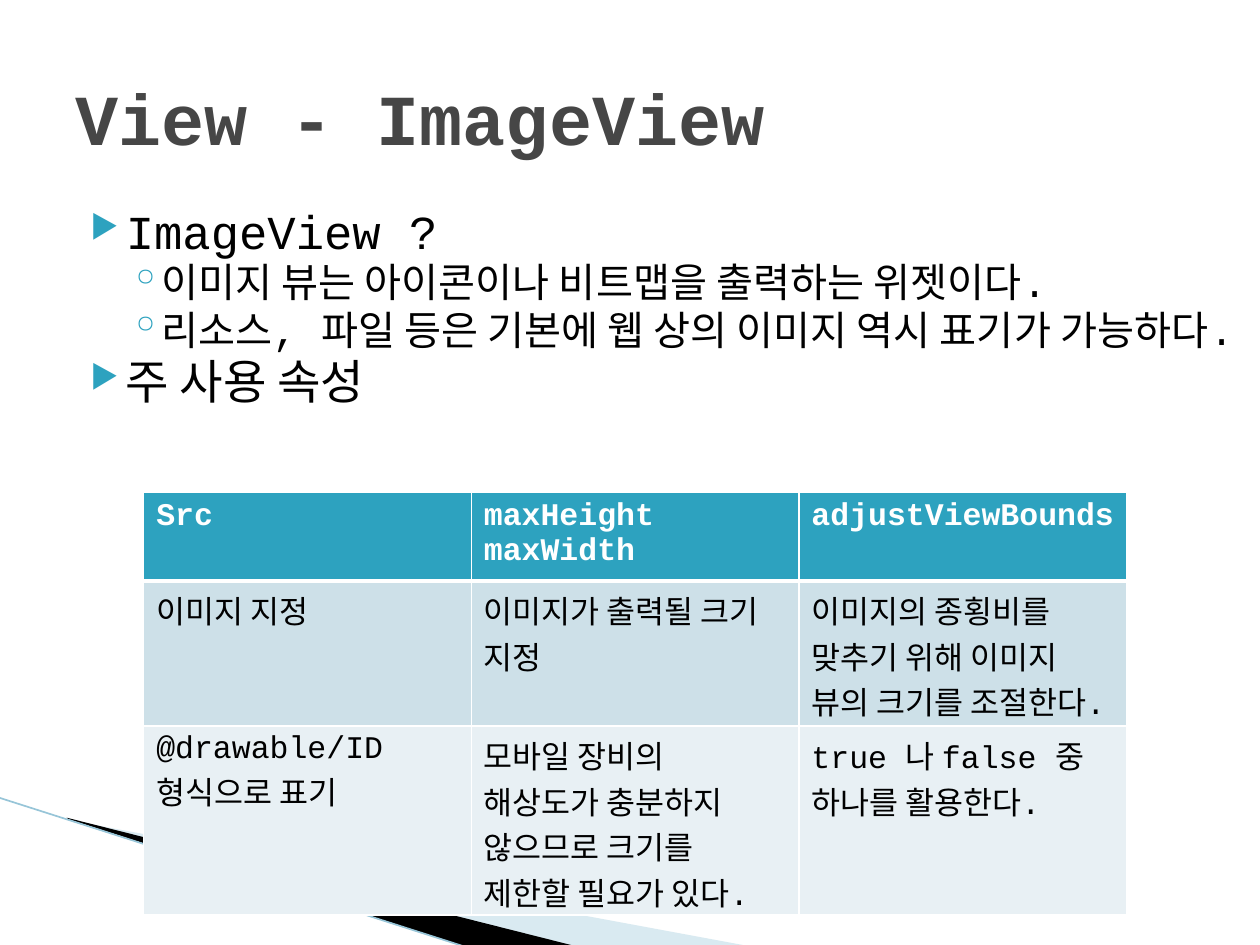
from lxml import etree
from pptx import Presentation
from pptx.dml.color import RGBColor
from pptx.enum.shapes import MSO_CONNECTOR
from pptx.enum.text import MSO_ANCHOR, PP_ALIGN
from pptx.oxml.ns import qn
from pptx.util import Inches, Pt

STRAIGHT = MSO_CONNECTOR.STRAIGHT
MIDDLE, TOP = MSO_ANCHOR.MIDDLE, MSO_ANCHOR.TOP
LEFT = PP_ALIGN.LEFT

FONT = "Courier New"
TEAL, BLACK, WHITE, GREY = "2DA2BF", "000000", "FFFFFF", "464646"
PALE_BLUE, EDGE_BLUE = "A0CBDC", "97C5D8"

TITLE = "View - ImageView"
BULLETS = [
    (0, "ImageView ?"),
    (1, "이미지 뷰는 아이콘이나 비트맵을 출력하는 위젯이다."),
    (1, "리소스, 파일 등은 기본에 웹 상의 이미지 역시 표기가 가능하다."),
    (0, "주 사용 속성"),
]
# One entry per level: indents in inches, sizes and space in points
LEVELS = [
    {"left": 0.4, "hang": 0.28, "size": 27, "before": 4, "char": "▶", "percent": 68},
    {"left": 0.68, "hang": 0.25, "size": 23, "before": 3.2, "char": "◦", "percent": 100},
]
ATTRIBUTES = [
    ["Src", "maxHeight\nmaxWidth", "adjustViewBounds"],
    ["이미지 지정", "이미지가 출력될 크기 지정",
     "이미지의 종횡비를 맞추기 위해 이미지 뷰의 크기를 조절한다."],
    ["@drawable/ID 형식으로 표기",
     "모바일 장비의 해상도가 충분하지 않으므로 크기를 제한할 필요가 있다.",
     "true 나 false 중 하나를 활용한다."],
]
ROW_FILLS = [TEAL, "CDE0E8", "E8F0F4"]
ROW_HEIGHTS = [0.65, 1.15, 1.5]
COLUMN_WIDTH = 2.6

PALE_WEDGE = [(0.55, 6.51), (5.95, 7.51), (4.56, 7.51), (0.55, 6.5)]
BLACK_WEDGE = [(0.53, 6.49), (4.57, 7.51), (3.72, 7.52), (0.54, 6.5)]


def rgb(value):
    return RGBColor.from_string(value)


def add_child(parent, tag, **attributes):
    return etree.SubElement(parent, qn(tag), attributes)


def add_span(para, text, size, color, bold=False):
    span = para.add_run()
    span.text = text
    span.font.name = FONT
    span.font.size = Pt(size)
    span.font.bold = bold
    span.font.color.rgb = rgb(color)


def add_wedge(page, points, color, opacity=100):
    points = [(Inches(x), Inches(y)) for x, y in points]
    builder = page.shapes.build_freeform(*points[0])
    builder.add_line_segments(points[1:], close=True)
    wedge = builder.convert_to_shape()
    wedge.shadow.inherit = False
    wedge.line.fill.background()
    wedge.fill.solid()
    wedge.fill.fore_color.rgb = rgb(color)
    if opacity < 100:
        paint = wedge.fill._xPr.find(qn("a:solidFill"))[0]
        add_child(paint, "a:alpha", val=str(opacity * 1000))


def add_edge(page, start, end):
    edge = page.shapes.add_connector(STRAIGHT, *map(Inches, start + end))
    edge.line.color.rgb = rgb(EDGE_BLUE)
    edge.line.width = Pt(0.95)
    add_child(edge._element.spPr, "a:effectLst")


def format_bullet(para, level):
    style = LEVELS[level]
    para.level = level
    properties = para._p.get_or_add_pPr()
    properties.set("marL", str(Inches(style["left"])))
    properties.set("indent", str(-Inches(style["hang"])))
    add_child(add_child(properties, "a:buClr"), "a:srgbClr", val=TEAL)
    add_child(properties, "a:buSzPct", val=str(style["percent"] * 1000))
    add_child(properties, "a:buChar", char=style["char"])
    para.line_spacing = 0.86


def add_bullets(page):
    box = page.shapes.add_textbox(Inches(0.5), Inches(1.62), Inches(9.3), Inches(4.95))
    frame = box.text_frame
    frame.word_wrap = True
    for index, (level, text) in enumerate(BULLETS):
        para = frame.add_paragraph() if index else frame.paragraphs[0]
        format_bullet(para, level)
        if index:
            para.space_before = Pt(LEVELS[level]["before"])
        add_span(para, text, LEVELS[level]["size"], BLACK)


def set_borders(cell, bottom_width):
    """Draw white cell borders; they must come before the fill."""
    properties = cell._tc.get_or_add_tcPr()
    for side, width in (("L", 1), ("R", 1), ("T", 1), ("B", bottom_width)):
        border = add_child(properties, f"a:ln{side}", w=str(Pt(width)))
        add_child(add_child(border, "a:solidFill"), "a:srgbClr", val=WHITE)


def add_attribute_table(page):
    columns = len(ATTRIBUTES[0])
    table = page.shapes.add_table(
        len(ATTRIBUTES), columns, Inches(1.14), Inches(3.91),
        Inches(COLUMN_WIDTH * columns), Inches(sum(ROW_HEIGHTS))).table
    for column in table.columns:
        column.width = Inches(COLUMN_WIDTH)
    for row_index, texts in enumerate(ATTRIBUTES):
        header = row_index == 0
        table.rows[row_index].height = Inches(ROW_HEIGHTS[row_index])
        for column_index, text in enumerate(texts):
            cell = table.cell(row_index, column_index)
            set_borders(cell, 3 if header else 1)
            cell.fill.solid()
            cell.fill.fore_color.rgb = rgb(ROW_FILLS[row_index])
            frame = cell.text_frame
            for index, line in enumerate(text.split("\n")):
                para = frame.add_paragraph() if index else frame.paragraphs[0]
                add_span(para, line, 18, WHITE if header else BLACK, header)
            cell.vertical_anchor = TOP


def add_title(page):
    title = page.shapes.title
    title.left, title.top = Inches(0.5), Inches(0.3)
    title.width, title.height = Inches(9), Inches(1.25)
    title.text_frame.vertical_anchor = MIDDLE
    para = title.text_frame.paragraphs[0]
    para.alignment = LEFT
    add_span(para, TITLE, 41, GREY, bold=True)


def main():
    deck = Presentation()
    deck.slide_width, deck.slide_height = Inches(10), Inches(7.5)
    page = deck.slides.add_slide(deck.slide_layouts[5])
    add_wedge(page, PALE_WEDGE, PALE_BLUE, opacity=40)
    add_wedge(page, BLACK_WEDGE, BLACK)
    add_edge(page, (-0.01, 6.33), (3.71, 7.52))
    add_bullets(page)
    add_title(page)
    add_attribute_table(page)
    deck.save("out.pptx")


if __name__ == "__main__":
    main()
